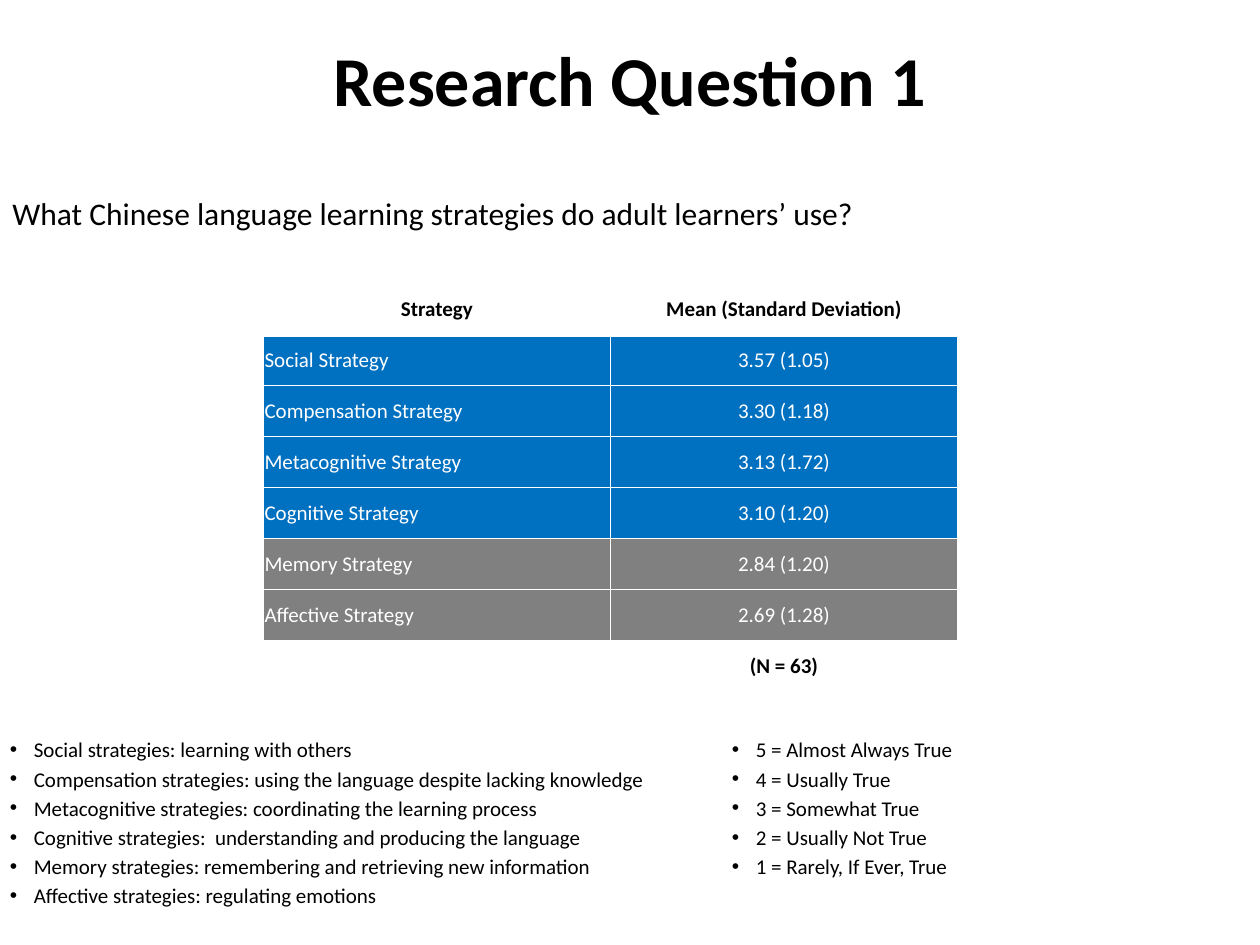
from pptx import Presentation
from pptx.util import Inches, Pt
from pptx.dml.color import RGBColor as RGB
from pptx.enum.text import MSO_ANCHOR as Anchor, PP_ALIGN as Align
from pptx.oxml.ns import qn
from lxml.etree import SubElement as Sub

FONT = "Calibri"
HUE = {"ink": "000000", "paper": "FFFFFF", "high": "0070C0", "low": "808080"}

ROWS = [
    ("Strategy", "Mean (Standard Deviation)", "paper"),
    ("Social Strategy", "3.57 (1.05)", "high"),
    ("Compensation Strategy", "3.30 (1.18)", "high"),
    ("Metacognitive Strategy", "3.13 (1.72)", "high"),
    ("Cognitive Strategy", "3.10 (1.20)", "high"),
    ("Memory Strategy", "2.84 (1.20)", "low"),
    ("Affective Strategy", "2.69 (1.28)", "low"),
    ("", "(N = 63)", "paper"),
]
TERMS = [
    "Social strategies: learning with others",
    "Compensation strategies: using the language despite lacking knowledge",
    "Metacognitive strategies: coordinating the learning process",
    "Cognitive strategies:  understanding and producing the language",
    "Memory strategies: remembering and retrieving new information",
    "Affective strategies: regulating emotions",
]
SCALE = [
    "5 = Almost Always True",
    "4 = Usually True",
    "3 = Somewhat True",
    "2 = Usually Not True",
    "1 = Rarely, If Ever, True",
]


def add_run(para, text, size, hue="ink", bold=False):
    run = para.add_run()
    run.text = text
    font = run.font
    font.name, font.size, font.bold = FONT, Pt(size), bold
    font.color.rgb = RGB.from_string(HUE[hue])


def add_frame(slide, box):
    frame = slide.shapes.add_textbox(*map(Inches, box)).text_frame
    frame.word_wrap = True
    return frame


def add_title(slide, box, text):
    frame = add_frame(slide, box)
    frame.vertical_anchor = Anchor.MIDDLE
    para = frame.paragraphs[0]
    para.alignment = Align.CENTER
    add_run(para, text, 40, bold=True)


def add_question(slide, box, text):
    para = add_frame(slide, box).paragraphs[0]
    para.line_spacing = 0.8
    add_run(para, text, 18)


def add_edges(cell, head):
    props = cell._tc.get_or_add_tcPr()
    for side in "LRTB":
        width = Pt(3 if head and side == "B" else 1)
        line = Sub(props, qn(f"a:ln{side}"), w=str(width))
        Sub(Sub(line, qn("a:solidFill")), qn("a:srgbClr"), val=HUE["paper"])


def add_scores(slide, box):
    left, top, width, height = map(Inches, box)
    table = slide.shapes.add_table(len(ROWS), 2, left, top, width, height).table
    for col in table.columns:
        col.width = width // 2
    for r, (name, score, fill) in enumerate(ROWS):
        table.rows[r].height = height // len(ROWS)
        plain = fill == "paper"
        for c, text in enumerate((name, score)):
            cell = table.cell(r, c)
            add_edges(cell, r == 0)
            cell.fill.solid()
            cell.fill.fore_color.rgb = RGB.from_string(HUE[fill])
            cell.vertical_anchor = Anchor.MIDDLE
            cell.margin_left = cell.margin_right = cell.margin_top = Inches(0.01)
            cell.margin_bottom = 0
            para = cell.text_frame.paragraphs[0]
            para.alignment = Align.CENTER if c or r == 0 else Align.LEFT
            if text:
                add_run(para, text, 12, "ink" if plain else "paper", plain)


def add_list(slide, box, items):
    frame = add_frame(slide, box)
    for i, text in enumerate(items):
        para = frame.add_paragraph() if i else frame.paragraphs[0]
        props = para._p.get_or_add_pPr()
        props.set("marL", str(Inches(0.19)))
        props.set("indent", str(-Inches(0.19)))
        Sub(props, qn("a:buFont"), typeface="Arial")
        Sub(props, qn("a:buChar"), char="•")
        if i:
            para.space_before = Pt(2.2)
        add_run(para, text, 12)


def main():
    deck = Presentation()
    deck.slide_width, deck.slide_height = Inches(10), Inches(7.5)
    slide = deck.slides.add_slide(deck.slide_layouts[6])
    add_title(slide, (0.83, 0, 8.34, 1.25), "Research Question 1")
    add_question(slide, (0, 1.55, 10, 0.66),
                 "What Chinese language learning strategies do adult learners’ use?")
    add_scores(slide, (2.09, 2.25, 5.51, 3.24))
    add_list(slide, (-0.02, 5.8, 5.25, 0.66), TERMS)
    add_list(slide, (5.71, 5.8, 4.29, 0.66), SCALE)
    deck.save("out.pptx")


if __name__ == "__main__":
    main()
